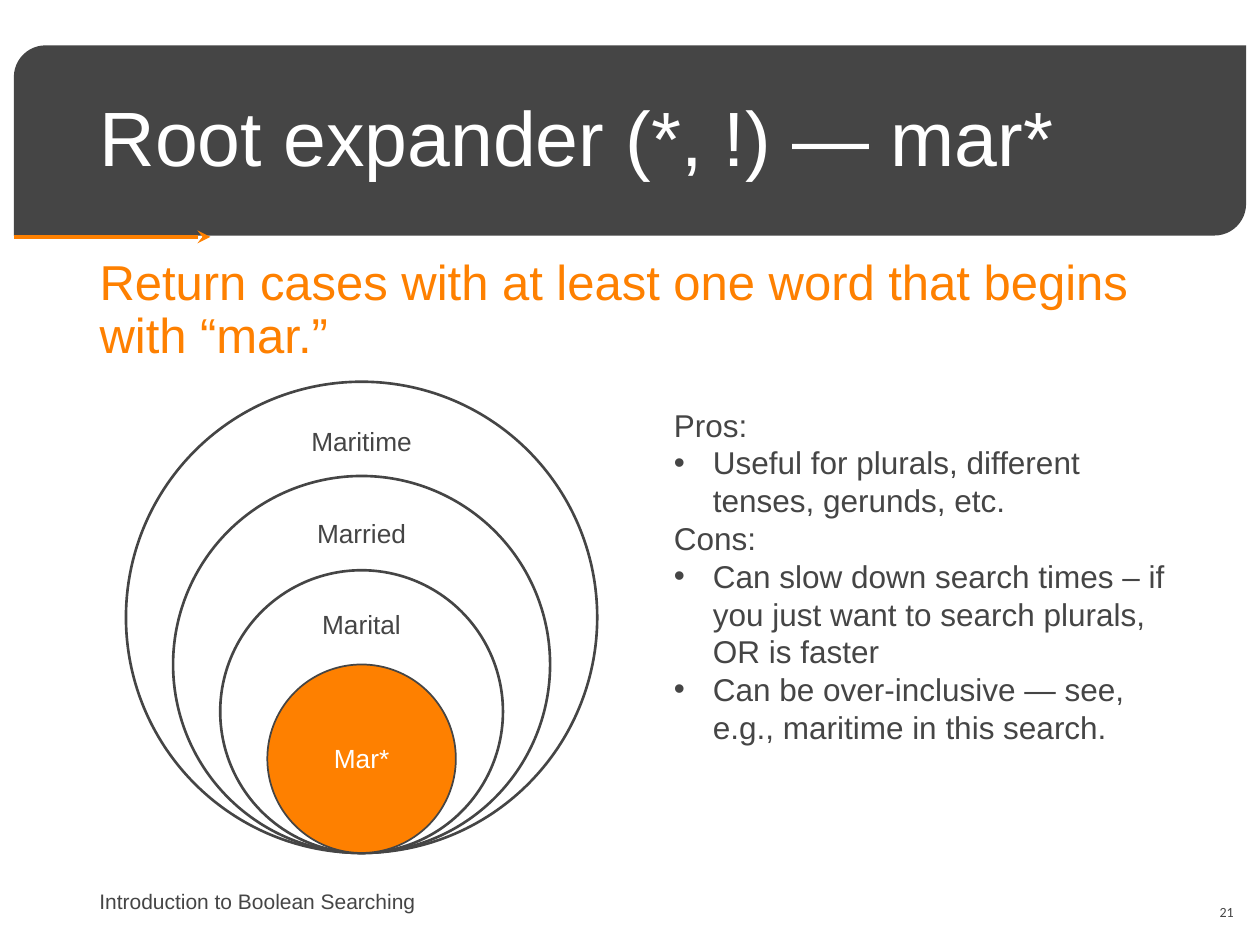
from lxml.etree import SubElement
from pptx import Presentation
from pptx.dml.color import RGBColor
from pptx.enum.shapes import MSO_CONNECTOR, MSO_SHAPE
from pptx.enum.text import MSO_ANCHOR, MSO_AUTO_SIZE, PP_ALIGN
from pptx.oxml.ns import qn
from pptx.util import Inches, Pt

HUES = {"dark": "454545", "accent": "FE8000", "white": "FFFFFF"}


def hue(name):
    return RGBColor.from_string(HUES[name])


def place(shape, left, top, width, height):
    shape.left, shape.top = Inches(left), Inches(top)
    shape.width, shape.height = Inches(width), Inches(height)


def add_run(para, text, size, color, font="Arial"):
    run = para.add_run()
    run.text = text
    run.font.size = Pt(size)
    run.font.name = font
    run.font.color.rgb = hue(color)


def set_bullet(para, char=None, indent=0):
    props = para._p.get_or_add_pPr()
    props.set("marL", str(Inches(indent)))
    props.set("indent", str(-Inches(indent)))
    if char:
        SubElement(props, qn("a:buFont"), typeface="Arial")
        SubElement(props, qn("a:buChar"), char=char)
    else:
        SubElement(props, qn("a:buNone"))


def add_box(slide, area, anchor=MSO_ANCHOR.MIDDLE):
    box = slide.shapes.add_textbox(*map(Inches, area))
    frame = box.text_frame
    frame.word_wrap = True
    frame.vertical_anchor = anchor
    return frame


def add_label(slide, area, text, size, color, align=PP_ALIGN.LEFT, font="Arial"):
    para = add_box(slide, area).paragraphs[0]
    para.alignment = align
    add_run(para, text, size, color, font)


def add_shape(slide, kind, area, fill=None, line=None, weight=1.5):
    shape = slide.shapes.add_shape(kind, *map(Inches, area))
    shape.shadow.inherit = False
    if fill:
        shape.fill.solid()
        shape.fill.fore_color.rgb = hue(fill)
    else:
        shape.fill.background()
    if line:
        shape.line.color.rgb = hue(line)
        shape.line.width = Pt(weight)
    else:
        shape.line.fill.background()
    return shape


def add_arrow(slide, start, end):
    arrow = slide.shapes.add_connector(
        MSO_CONNECTOR.STRAIGHT, *map(Inches, start + end))
    arrow.line.color.rgb = hue("accent")
    arrow.line.width = Pt(2.5)
    SubElement(arrow.line._get_or_add_ln(), qn("a:tailEnd"), type="stealth")
    SubElement(arrow.element.spPr, qn("a:effectLst"))


def fill_holder(holder, area, text, size, color, anchor):
    place(holder, *area)
    frame = holder.text_frame
    frame.auto_size = MSO_AUTO_SIZE.NONE
    frame.vertical_anchor = anchor
    para = frame.paragraphs[0]
    set_bullet(para)
    para.alignment = PP_ALIGN.LEFT
    para.line_spacing = 0.9
    para.space_before = Pt(0)
    add_run(para, text, size, color)


def add_rings(slide):
    mid, base, full = 2.87, 6.77, 3.74
    rings = [("Maritime", 3.5), ("Married", 4.23), ("Marital", 4.95), ("Mar*", 6.02)]
    for step, (word, center) in enumerate(rings):
        core = step == len(rings) - 1
        size = full * (1 - 0.2 * step)
        add_shape(slide, MSO_SHAPE.OVAL, (mid - size / 2, base - size, size, size),
                  "accent" if core else "white", "dark", 1 if core else 1.5)
        add_label(slide, (mid - 0.6, center - 0.25, 1.2, 0.5), word, 15,
                  "white" if core else "dark", PP_ALIGN.CENTER)


def add_notes(slide):
    lines = [
        ("Pros:", False),
        ("Useful for plurals, different tenses, gerunds, etc.", True),
        ("Cons:", False),
        ("Can slow down search times – if you just want to search plurals, "
         "OR is faster", True),
        ("Can be over-inclusive — see, e.g., maritime in this search.", True),
    ]
    frame = add_box(slide, (5.25, 3.17, 4.13, 3.43), MSO_ANCHOR.TOP)
    for i, (text, listed) in enumerate(lines):
        para = frame.add_paragraph() if i else frame.paragraphs[0]
        if listed:
            set_bullet(para, "•", 0.31)
        add_run(para, text, 18, "dark")


def main():
    deck = Presentation()
    deck.slide_width, deck.slide_height = Inches(10), Inches(7.5)
    slide = deck.slides.add_slide(deck.slide_layouts[1])
    title, body = slide.placeholders

    # Banner, set behind the title, and its arrow
    banner = add_shape(slide, MSO_SHAPE.ROUND_2_DIAG_RECTANGLE,
                       (0.11, 0.36, 9.78, 1.51), "dark")
    title.element.addprevious(banner.element)
    add_arrow(slide, (0.11, 1.88), (1.67, 1.88))

    # Title and lead sentence
    fill_holder(title, (0.69, 0.4, 8.62, 1.45), "Root expander (*, !) — mar*",
                44, "white", MSO_ANCHOR.MIDDLE)
    fill_holder(body, (0.69, 2, 8.62, 4.76),
                "Return cases with at least one word that begins with “mar.”",
                28, "accent", MSO_ANCHOR.TOP)

    # Pros and cons beside the nested circles
    add_notes(slide)
    add_rings(slide)

    # Footer
    add_label(slide, (7.64, 7.04, 2.25, 0.4), "21", 8, "dark",
              PP_ALIGN.RIGHT, "Calibri")
    add_label(slide, (0.69, 6.95, 3.31, 0.4), "Introduction to Boolean Searching",
              12, "dark")
    deck.save("out.pptx")


if __name__ == "__main__":
    main()
